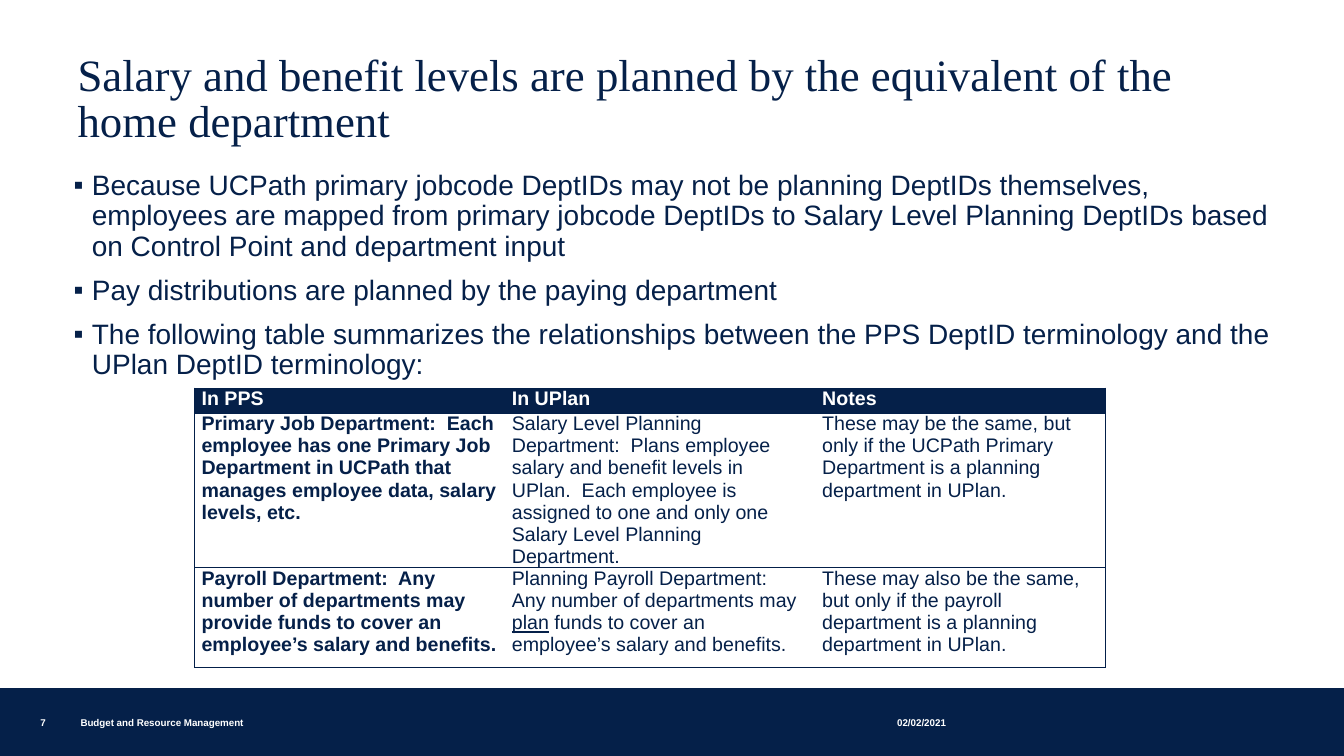
from lxml import etree
from pptx import Presentation
from pptx import util as u
from pptx.dml.color import RGBColor
from pptx.enum import shapes, text
from pptx.oxml import ns

NAVY = RGBColor(0x05, 0x20, 0x49)
BORDER = RGBColor(0x03, 0x1F, 0x49)
WHITE = RGBColor(0xFF, 0xFF, 0xFF)
SANS = "Arial"
SERIF = "Times New Roman"

HEADLINE = ("Salary and benefit levels are planned by the equivalent of the "
            "home department")
POINTS = [
    "Because UCPath primary jobcode DeptIDs may not be planning DeptIDs "
    "themselves, employees are mapped from primary jobcode DeptIDs to Salary "
    "Level Planning DeptIDs based on Control Point and department input",
    "Pay distributions are planned by the paying department",
    "The following table summarizes the relationships between the PPS DeptID "
    "terminology and the UPlan DeptID terminology:",
]
TERMS = [
    [["In PPS"], ["In UPlan"], ["Notes"]],
    [["Primary Job Department:  Each employee has one Primary Job Department "
      "in UCPath that manages employee data, salary levels, etc."],
     ["Salary Level Planning Department:  Plans employee salary and benefit "
      "levels in UPlan.  Each employee is assigned to one and only one Salary "
      "Level Planning Department."],
     ["These may be the same, but only if the UCPath Primary Department is a "
      "planning department in UPlan."]],
    [["Payroll Department:  Any number of departments may provide funds to "
      "cover an employee’s salary and benefits."],
     ["Planning Payroll Department:  Any number of departments may ", "plan",
      " funds to cover an employee’s salary and benefits."],
     ["These may also be the same, but only if the payroll department is a "
      "planning department in UPlan."]],
]
COLUMN_WIDTHS = [7.82, 7.82, 7.32]
ROW_HEIGHTS = [0.63, 3.9, 2.51]
FOOTER = [
    ("7", 1.02, 0.91),
    ("Budget and Resource Management", 2.03, 15.98),
    ("02/02/2021", 22.61, 3.43),
]


def place(part, left, top, width, height):
    """Move and size a part, in centimetres."""
    part.left, part.top = u.Cm(left), u.Cm(top)
    part.width, part.height = u.Cm(width), u.Cm(height)


def add_run(paragraph, words, size, color, face=SANS, bold=False):
    """Add one formatted run to a paragraph and return it."""
    run = paragraph.add_run()
    run.text = words
    run.font.size = u.Pt(size)
    run.font.name = face
    run.font.bold = bold
    run.font.color.rgb = color
    return run


def add_bullet(paragraph):
    """Give a paragraph a hanging square bullet."""
    properties = paragraph._p.get_or_add_pPr()
    properties.set("marL", str(u.Cm(0.46)))
    properties.set("indent", str(-u.Cm(0.46)))
    tint = etree.SubElement(properties, ns.qn("a:buClr"))
    etree.SubElement(tint, ns.qn("a:srgbClr"), val=str(NAVY))
    etree.SubElement(properties, ns.qn("a:buFont"), typeface=SANS)
    etree.SubElement(properties, ns.qn("a:buChar"), char="▪")


def add_border(cell, side, visible):
    """Draw or clear one border of a table cell."""
    line = etree.SubElement(cell._tc.get_or_add_tcPr(), ns.qn(f"a:ln{side}"),
                            w=str(u.Pt(0.75)))
    if visible:
        fill = etree.SubElement(line, ns.qn("a:solidFill"))
        etree.SubElement(fill, ns.qn("a:srgbClr"), val=str(BORDER))
    else:
        etree.SubElement(line, ns.qn("a:noFill"))


def fill_title(title):
    """Set the headline in the title placeholder."""
    place(title, 1.7, 1.27, 29.97, 2.41)
    frame = title.text_frame
    frame.auto_size = text.MSO_AUTO_SIZE.NONE
    frame.vertical_anchor = text.MSO_ANCHOR.TOP
    paragraph = frame.paragraphs[0]
    paragraph.alignment = text.PP_ALIGN.LEFT
    paragraph.line_spacing = 0.85
    add_run(paragraph, HEADLINE, 32, NAVY, SERIF)


def fill_body(body):
    """Set the bulleted points in the body placeholder."""
    place(body, 1.6, 4.19, 30.84, 11.15)
    frame = body.text_frame
    frame.auto_size = text.MSO_AUTO_SIZE.NONE
    for index, point in enumerate(POINTS):
        paragraph = frame.add_paragraph() if index else frame.paragraphs[0]
        add_bullet(paragraph)
        paragraph.line_spacing = 0.9
        paragraph.space_before = u.Pt(10 if index else 0)
        add_run(paragraph, point, 20, NAVY)


def fill_cell(cell, pieces, row, column):
    """Set the words, borders and fill of one table cell."""
    header = row == 0
    cell.margin_left = cell.margin_right = u.Cm(0.18)
    cell.margin_top = cell.margin_bottom = 0
    add_border(cell, "L", column == 0)
    add_border(cell, "R", column == len(COLUMN_WIDTHS) - 1)
    add_border(cell, "T", True)
    add_border(cell, "B", True)
    cell.fill.solid()
    cell.fill.fore_color.rgb = NAVY if header else WHITE
    paragraph = cell.text_frame.paragraphs[0]
    paragraph.alignment = text.PP_ALIGN.LEFT
    for piece in pieces:
        run = add_run(paragraph, piece, 14, WHITE if header else NAVY,
                      bold=header or column == 0)
        run.font.underline = piece == "plan"


def add_terms(slide):
    """Add the table that relates the two terminologies."""
    table = slide.shapes.add_table(
        len(ROW_HEIGHTS), len(COLUMN_WIDTHS), u.Cm(4.9), u.Cm(9.78),
        u.Cm(sum(COLUMN_WIDTHS)), u.Cm(sum(ROW_HEIGHTS))).table
    table.horz_banding = False
    for column, width in zip(table.columns, COLUMN_WIDTHS):
        column.width = u.Cm(width)
    for row, height in zip(table.rows, ROW_HEIGHTS):
        row.height = u.Cm(height)
    for row, entries in enumerate(TERMS):
        for column, pieces in enumerate(entries):
            fill_cell(table.cell(row, column), pieces, row, column)


def add_band(slide, width):
    """Add the dark band along the foot of the slide."""
    band = slide.shapes.add_shape(shapes.MSO_SHAPE.RECTANGLE, 0, u.Cm(17.37),
                                  width, u.Cm(1.68))
    band.shadow.inherit = False
    band.fill.solid()
    band.fill.fore_color.rgb = NAVY
    band.line.color.rgb = NAVY
    band.line.width = u.Pt(1.5)


def add_footer(slide, words, left, width):
    """Add one small label on the band."""
    label = slide.shapes.add_textbox(u.Cm(left), u.Cm(17.93), u.Cm(width),
                                     u.Cm(0.43))
    frame = label.text_frame
    frame.word_wrap = True
    frame.vertical_anchor = text.MSO_ANCHOR.BOTTOM
    frame.margin_left = frame.margin_right = 0
    frame.margin_top = frame.margin_bottom = 0
    add_run(frame.paragraphs[0], words, 7, WHITE, bold=True)


def main():
    """Build the slide and save it."""
    deck = Presentation()
    deck.slide_width, deck.slide_height = u.Cm(33.87), u.Cm(19.05)
    slide = deck.slides.add_slide(deck.slide_layouts[1])
    add_band(slide, deck.slide_width)
    fill_title(slide.shapes.title)
    fill_body(slide.placeholders[1])
    add_terms(slide)
    for words, left, width in FOOTER:
        add_footer(slide, words, left, width)
    deck.save("out.pptx")


if __name__ == "__main__":
    main()
